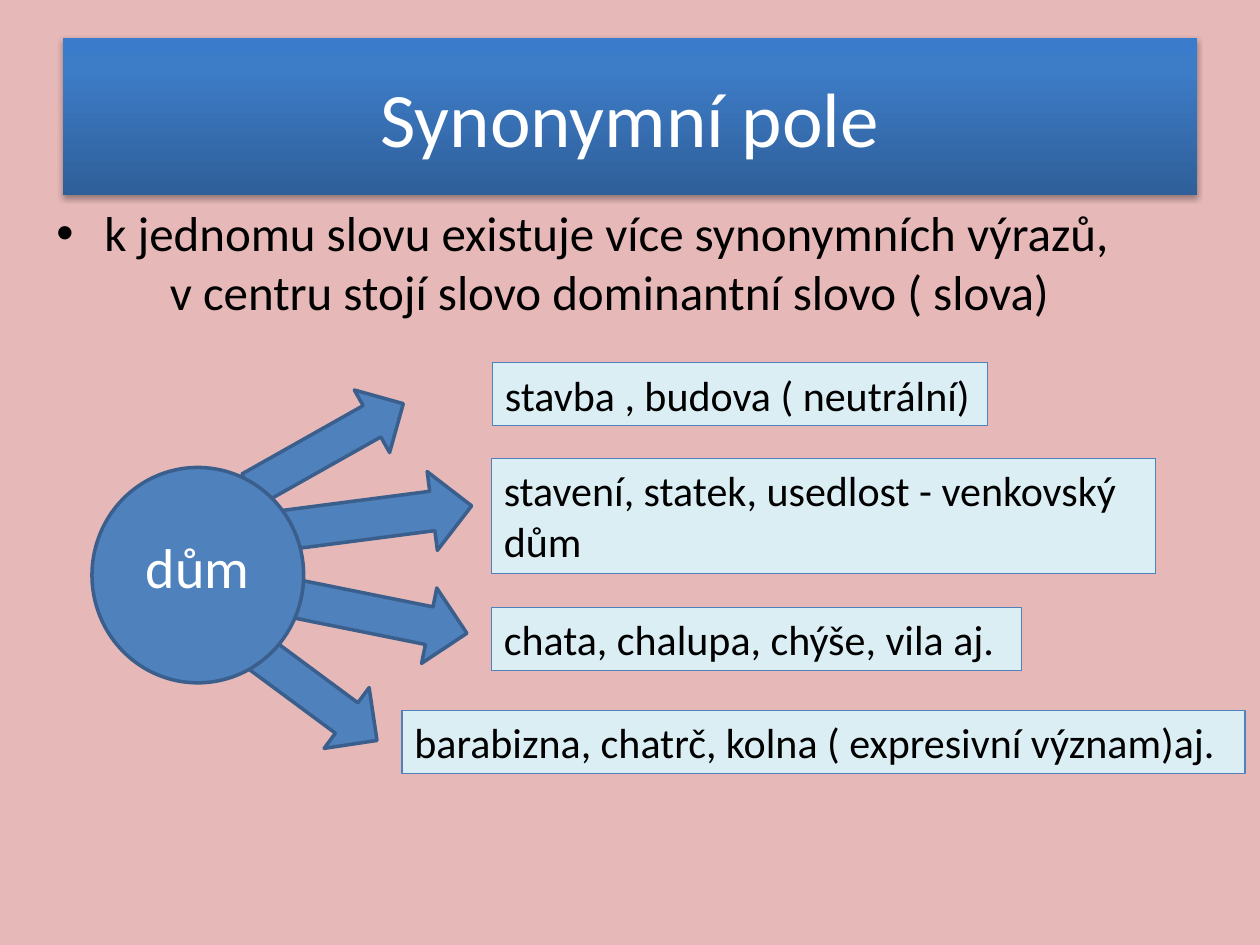
from copy import deepcopy

from pptx import Presentation
from pptx.dml.color import RGBColor
from pptx.enum.shapes import MSO_SHAPE
from pptx.enum.text import MSO_ANCHOR, MSO_AUTO_SIZE, PP_ALIGN
from pptx.oxml import parse_xml
from pptx.oxml.ns import nsdecls
from pptx.util import Inches, Pt

PINK = RGBColor(0xE6, 0xB9, 0xB8)
BLUE = RGBColor(0x4F, 0x81, 0xBD)
DARK_BLUE = RGBColor(0x3A, 0x5F, 0x8C)
PALE_BLUE = RGBColor(0xDB, 0xEE, 0xF4)
TITLE_STOPS = [
    (0, RGBColor(0x2F, 0x5F, 0x99)),
    (0.8, RGBColor(0x3D, 0x7C, 0xC7)),
    (1, RGBColor(0x3A, 0x7C, 0xCB)),
]
WHITE = RGBColor(0xFF, 0xFF, 0xFF)
BLACK = RGBColor(0, 0, 0)


def add_run(p, text, size, color):
    r = p.add_run()
    r.text = text
    r.font.name = "Calibri"
    r.font.size = Pt(size)
    r.font.color.rgb = color


def add_filled_shape(kind, box, fill, line, width):
    sp = s.shapes.add_shape(kind, *map(Inches, box))
    sp.shadow.inherit = False
    sp.fill.solid()
    sp.fill.fore_color.rgb = fill
    sp.line.color.rgb = line
    sp.line.width = Pt(width)
    return sp


prs = Presentation()
prs.slide_width, prs.slide_height = Inches(10), Inches(7.5)
s = prs.slides.add_slide(prs.slide_layouts[5])
s.background.fill.solid()
s.background.fill.fore_color.rgb = PINK

# Title bar with gradient and soft shadow
title = s.shapes.title
title.left, title.top = Inches(0.5), Inches(0.3)
title.width, title.height = Inches(9), Inches(1.25)
title.fill.gradient()
title.fill.gradient_angle = 90
stops = title.fill.gradient_stops
stop_list = title._element.spPr.find(".//{*}gsLst")
stop_list.append(deepcopy(stop_list[-1]))
for stop, (position, color) in zip(title.fill.gradient_stops, TITLE_STOPS):
    stop.position = position
    stop.color.rgb = color
title._element.spPr.append(parse_xml(
    f'<a:effectLst {nsdecls("a")}>'
    f'<a:outerShdw blurRad="{Pt(3.1)}" dist="{Pt(1.8)}" dir="5400000" rotWithShape="0">'
    '<a:srgbClr val="000000"><a:alpha val="35000"/></a:srgbClr>'
    '</a:outerShdw></a:effectLst>'))
tf = title.text_frame
tf.vertical_anchor = MSO_ANCHOR.MIDDLE
p = tf.paragraphs[0]
p.alignment = PP_ALIGN.CENTER
add_run(p, "Synonymní pole", 44, WHITE)

# Explanation: a bullet and its further indented second line
tf = s.shapes.add_textbox(Inches(0.35), Inches(1.56), Inches(9), Inches(1.1)).text_frame
tf.word_wrap = True
p = tf.paragraphs[0]
p.space_before = Pt(5.6)
pPr = p._p.get_or_add_pPr()
pPr.set("marL", str(Inches(0.38)))
pPr.set("indent", str(-Inches(0.38)))
pPr.append(parse_xml(f'<a:buFont {nsdecls("a")} typeface="Arial"/>'))
pPr.append(parse_xml(f'<a:buChar {nsdecls("a")} char="•"/>'))
add_run(p, "k jednomu slovu existuje více synonymních výrazů,", 28, BLACK)
p = tf.add_paragraph()
p._p.get_or_add_pPr().set("marL", str(Inches(0.9)))
add_run(p, "v centru stojí slovo dominantní slovo ( slova)", 28, BLACK)

# Arrows fan out from behind the central circle
arrows = [
    ((2.29, 4.58, 1.43, 0.61), 11.4),
    ((1.91, 5.22, 1.2, 0.6), 36.5),
    ((2.2, 3.8, 1.55, 0.63), 352.6),
    ((1.9, 3.26, 1.39, 0.57), 330.6),
]
for box, angle in arrows:
    arrow = add_filled_shape(MSO_SHAPE.RIGHT_ARROW, box, BLUE, DARK_BLUE, 2)
    arrow.rotation = angle

add_filled_shape(MSO_SHAPE.OVAL, (0.73, 3.71, 1.68, 1.71), BLUE, DARK_BLUE, 2)
tf = s.shapes.add_textbox(Inches(1.06), Inches(4.18), Inches(1.03), Inches(0.64)).text_frame
tf.word_wrap = False
tf.auto_size = MSO_AUTO_SIZE.SHAPE_TO_FIT_TEXT
add_run(tf.paragraphs[0], "dům", 32, WHITE)

# Synonym groups
synonyms = [
    ((3.91, 2.88, 3.93, 0.5), False, "stavba , budova ( neutrální)"),
    ((3.9, 3.64, 5.27, 0.91), True, "stavení, statek, usedlost - venkovský dům"),
    ((3.9, 4.82, 4.21, 0.5), False, "chata, chalupa, chýše, vila aj."),
    ((3.19, 5.64, 6.69, 0.5), True, "barabizna, chatrč, kolna ( expresivní význam)aj."),
]
for box, wrap, text in synonyms:
    sp = add_filled_shape(MSO_SHAPE.RECTANGLE, box, PALE_BLUE, BLUE, 0.75)
    tf = sp.text_frame
    tf.word_wrap = wrap
    tf.auto_size = MSO_AUTO_SIZE.SHAPE_TO_FIT_TEXT
    tf.vertical_anchor = MSO_ANCHOR.TOP
    p = tf.paragraphs[0]
    p.alignment = PP_ALIGN.LEFT
    add_run(p, text, 24, BLACK)

prs.save("out.pptx")
